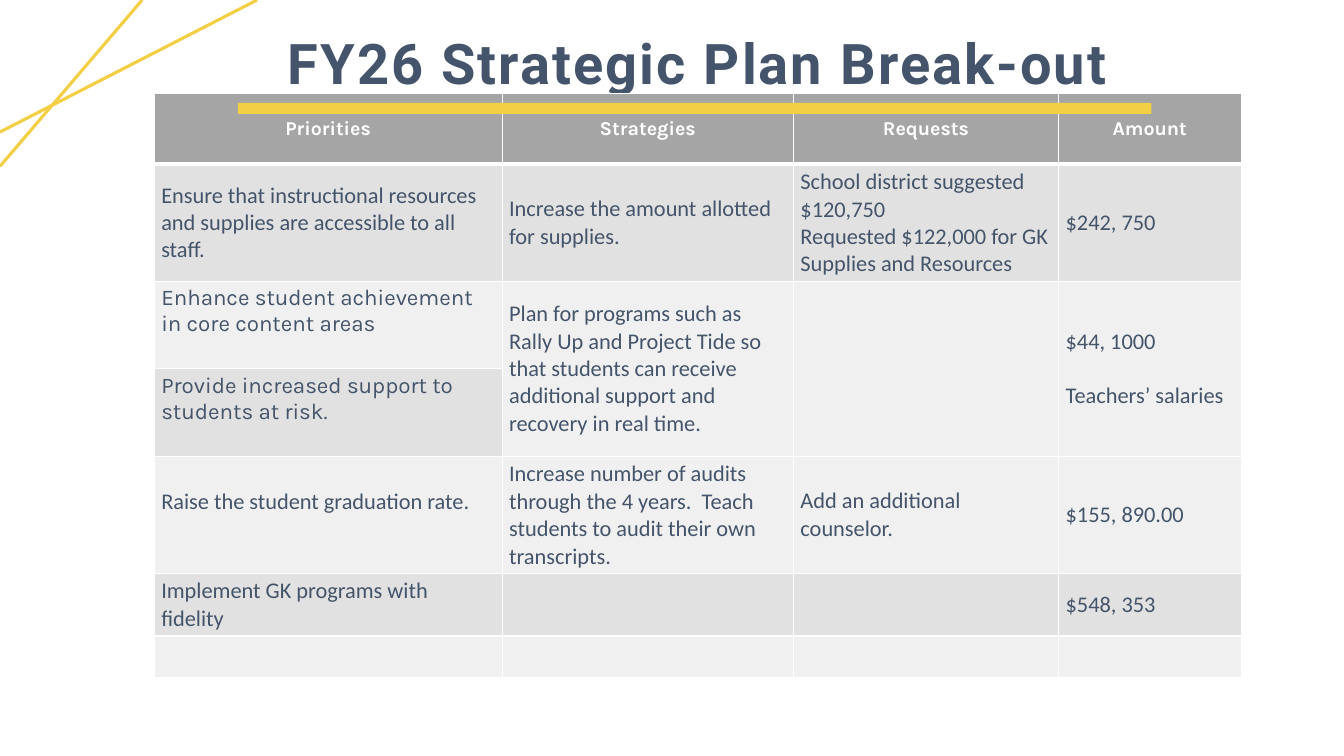
from pptx import Presentation
from pptx.dml.color import RGBColor
from pptx.enum.shapes import MSO_CONNECTOR, MSO_SHAPE
from pptx.enum.text import MSO_ANCHOR, PP_ALIGN
from pptx.oxml import parse_xml
from pptx.oxml.ns import nsdecls
from pptx.util import Inches, Pt
from lxml.etree import SubElement

YELLOW = RGBColor(0xF3, 0xCF, 0x45)
NAVY = RGBColor(0x44, 0x54, 0x6A)
WHITE = RGBColor(0xFF, 0xFF, 0xFF)
HEADER_GRAY = RGBColor(0xA5, 0xA5, 0xA5)
BAND_GRAYS = [RGBColor(0xF0, 0xF0, 0xF0), RGBColor(0xE1, 0xE1, 0xE1)]

COLUMN_WIDTHS = [3.45, 2.89, 2.63, 1.81]
ROW_HEIGHTS = [0.7, 1.16, 0.87, 0.87, 1.16, 0.62, 0.41]
PLAN_ROWS = [
    ["Priorities", "Strategies", "Requests", "Amount"],
    ["Ensure that instructional resources and supplies are accessible to all staff.",
     "Increase the amount allotted for supplies.",
     "School district suggested $120,750\nRequested $122,000 for GK Supplies and Resources",
     "$242, 750"],
    ["Enhance student achievement in core content areas",
     "Plan for programs such as Rally Up and Project Tide so that students can "
     "receive additional support and recovery in real time.",
     "", "$44, 1000\nTeachers’ salaries"],
    ["Provide increased support to students at risk.", "", "", ""],
    ["Raise the student graduation rate.",
     "Increase number of audits through the 4 years.  Teach students to audit "
     "their own transcripts.",
     "Add an additional counselor.", "$155, 890.00"],
    ["Implement GK programs with fidelity", "", "", "$548, 353"],
    ["", "", "", ""],
]
KARLA_ROWS = (2, 3)
TOP_ROWS = (2, 3, 5)


def add_corner_lines(slide, left, top):
    """Two crossing lines, each from the top edge to the left edge."""
    for across, down in [(1.41, 1.65), (2.55, 1.31)]:
        line = slide.shapes.add_connector(
            MSO_CONNECTOR.STRAIGHT, Inches(left + across), Inches(top),
            Inches(left), Inches(top + down))
        line.line.color.rgb = YELLOW
        line.line.width = Pt(2.25)
        SubElement(line.element.spPr,
                   "{http://schemas.openxmlformats.org/drawingml/2006/main}effectLst")


def style_para(para, font_name, size, color, bold=False):
    for span in para.runs:
        span.font.name = font_name
        span.font.size = Pt(size)
        span.font.color.rgb = color
        span.font.bold = bold


def add_title(slide, left, top, width, height):
    box = slide.shapes.add_textbox(Inches(left), Inches(top), Inches(width), Inches(height))
    frame = box.text_frame
    frame.word_wrap = True
    frame.vertical_anchor = MSO_ANCHOR.MIDDLE
    frame.text = "FY26 Strategic Plan Break-out"
    para = frame.paragraphs[0]
    para.alignment = PP_ALIGN.CENTER
    para.line_spacing = 0.9
    style_para(para, "Roboto", 40, NAVY, bold=True)
    para.runs[0].font._element.set("spc", "150")


def set_borders(cell, is_header):
    properties = cell._tc.get_or_add_tcPr()
    for side in "LRTB":
        points = 3 if is_header and side == "B" else 1
        properties.append(parse_xml(
            f'<a:ln{side} {nsdecls("a")} w="{Pt(points)}"><a:solidFill>'
            f'<a:srgbClr val="{WHITE}"/></a:solidFill></a:ln{side}>'))


def fill_cell(cell, text, row, column):
    is_header = row == 0
    set_borders(cell, is_header)
    cell.fill.solid()
    cell.fill.fore_color.rgb = HEADER_GRAY if is_header else BAND_GRAYS[row % 2]
    cell.margin_left = cell.margin_right = Inches(0.07)
    cell.margin_top = cell.margin_bottom = Inches(0.04)
    cell.vertical_anchor = MSO_ANCHOR.MIDDLE
    if column == 0 and row in TOP_ROWS:
        cell.vertical_anchor = MSO_ANCHOR.TOP
    if column == 0 and row == 4:
        cell.margin_bottom = Inches(0.31)  # sits half a line above the middle
    if not text:
        return
    cell.text_frame.text = text
    for para in cell.text_frame.paragraphs:
        if is_header:
            para.alignment = PP_ALIGN.CENTER
            style_para(para, "Karla", 14, WHITE, bold=True)
        else:
            karla = column == 0 and row in KARLA_ROWS
            style_para(para, "Karla" if karla else "Calibri", 16, NAVY)
    if row == 2 and column == 3:
        cell.text_frame.paragraphs[1].space_before = Pt(19.5)


def add_plan_table(slide, left, top):
    table = slide.shapes.add_table(
        len(ROW_HEIGHTS), len(COLUMN_WIDTHS), Inches(left), Inches(top),
        Inches(sum(COLUMN_WIDTHS)), Inches(sum(ROW_HEIGHTS))).table
    for column, width in zip(table.columns, COLUMN_WIDTHS):
        column.width = Inches(width)
    for row, height in zip(table.rows, ROW_HEIGHTS):
        row.height = Inches(height)
    for row, texts in enumerate(PLAN_ROWS):
        for column, text in enumerate(texts):
            fill_cell(table.cell(row, column), text, row, column)
    # The two student support priorities share one strategy, request and amount
    for column in range(1, 4):
        table.cell(2, column).merge(table.cell(3, column))


def add_title_bar(slide, left, top, width, height):
    bar = slide.shapes.add_shape(
        MSO_SHAPE.RECTANGLE, Inches(left), Inches(top), Inches(width), Inches(height))
    bar.shadow.inherit = False
    bar.fill.solid()
    bar.fill.fore_color.rgb = YELLOW
    bar.line.fill.background()


def main():
    deck = Presentation()
    deck.slide_width, deck.slide_height = Inches(13.33), Inches(7.5)
    slide = deck.slides.add_slide(deck.slide_layouts[6])
    add_corner_lines(slide, 0, 0)
    add_title(slide, 1.83, 0.03, 10.18, 1.25)
    add_plan_table(slide, 1.53, 0.93)
    add_title_bar(slide, 2.36, 1.02, 9.06, 0.11)
    deck.save("out.pptx")


if __name__ == "__main__":
    main()
